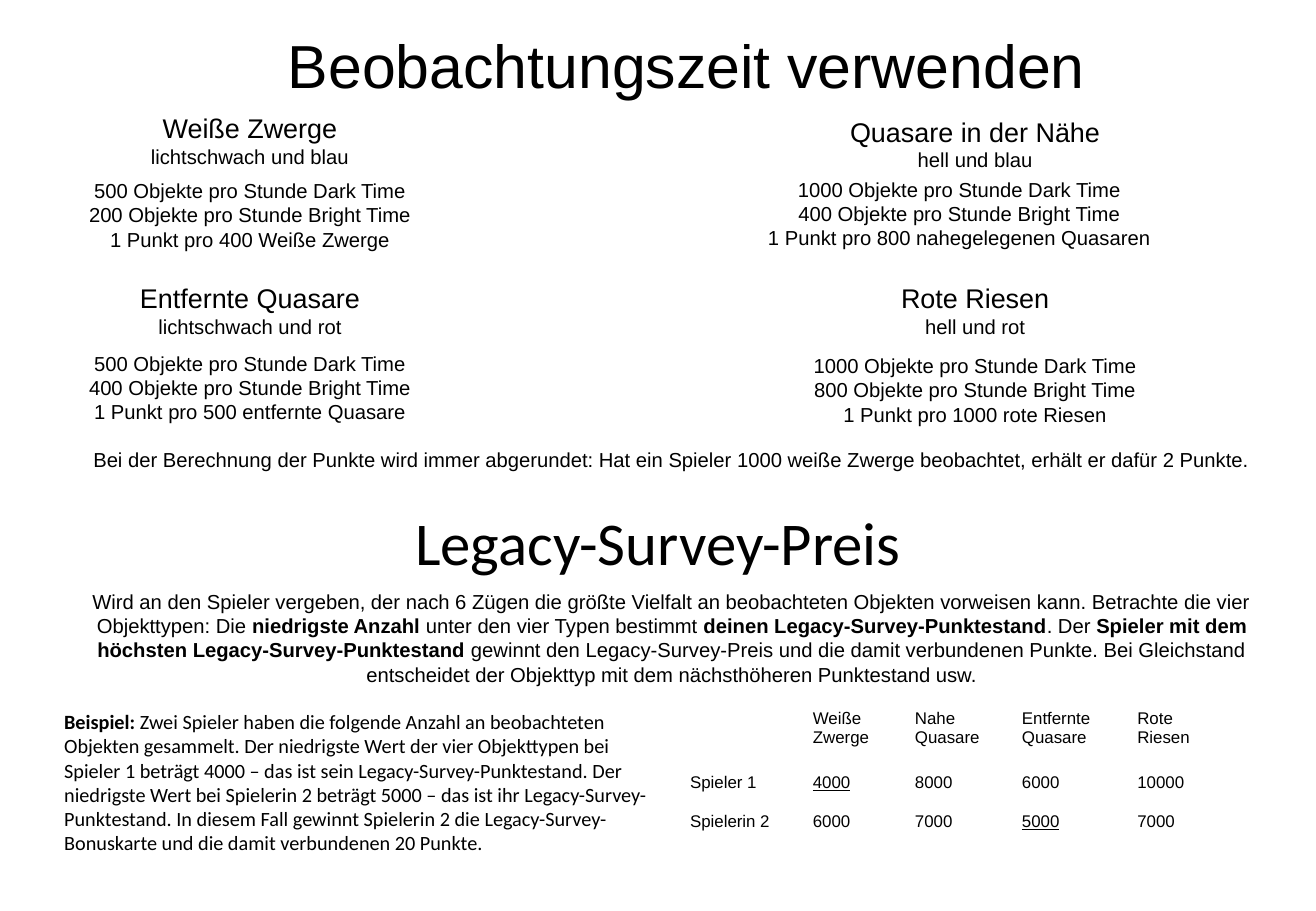
from pptx import Presentation, util as u
from pptx.dml.color import RGBColor
from pptx.enum import text

BLACK = RGBColor(0, 0, 0)
WIDTH, HEIGHT = u.Inches(10.83), u.Inches(7.5)
MARGIN, FULL = 3.97, 94.18  # left edge and width of the running text, in columns
TABLE_TOP = 77.2

# Object type, look, three rules; then centre, top and width of heading and of rules
OBJECT_TYPES = [
    ("Weiße Zwerge", "lichtschwach und blau",
     ["500 Objekte pro Stunde Dark Time",
      "200 Objekte pro Stunde Bright Time",
      "1 Punkt pro 400 Weiße Zwerge"],
     (19, 11.6, 17), (19, 18.93, 26.5)),
    ("Quasare in der Nähe", "hell und blau",
     ["1000 Objekte pro Stunde Dark Time",
      "400 Objekte pro Stunde Bright Time",
      "1 Punkt pro 800 nahegelegenen Quasaren"],
     (74.1, 12, 21.05), (72.9, 18.8, 31.12)),
    ("Entfernte Quasare", "lichtschwach und rot",
     ["500 Objekte pro Stunde Dark Time",
      "400 Objekte pro Stunde Bright Time",
      "1 Punkt pro 500 entfernte Quasare"],
     (19, 30.27, 18.84), (19, 37.87, 26.5)),
    ("Rote Riesen", "hell und rot",
     ["1000 Objekte pro Stunde Dark Time",
      "800 Objekte pro Stunde Bright Time",
      "1 Punkt pro 1000 rote Riesen"],
     (74.1, 30.27, 13.2), (74.1, 38.13, 26.59)),
]

ROUNDING = ("Bei der Berechnung der Punkte wird immer abgerundet: Hat ein Spieler "
            "1000 weiße Zwerge beobachtet, erhält er dafür 2 Punkte.")

# Running text as (words, bold) pairs
AWARD = [
    ("Wird an den Spieler vergeben, der nach 6 Zügen die größte Vielfalt an "
     "beobachteten Objekten vorweisen kann. Betrachte die vier Objekttypen: Die ", False),
    ("niedrigste Anzahl ", True),
    ("unter den vier Typen bestimmt ", False),
    ("deinen Legacy-Survey-Punktestand", True),
    (". Der ", False),
    ("Spieler mit dem höchsten Legacy-Survey-Punktestand ", True),
    ("gewinnt den Legacy-Survey-Preis und die damit verbundenen Punkte. Bei Gleichstand "
     "entscheidet der Objekttyp mit dem nächsthöheren Punktestand usw.", False),
]
EXAMPLE = [
    ("Beispiel:", True),
    (" Zwei Spieler haben die folgende Anzahl an beobachteten Objekten gesammelt. "
     "Der niedrigste Wert der vier Objekttypen bei Spieler 1 beträgt 4000 – das ist "
     "sein Legacy-Survey-Punktestand. Der niedrigste Wert bei Spielerin 2 beträgt 5000 "
     "– das ist ihr Legacy-Survey-Punktestand. In diesem Fall gewinnt Spielerin 2 die "
     "Legacy-Survey-Bonuskarte und die damit verbundenen 20 Punkte.", False),
]

SCORES = [
    ["", "Weiße Zwerge", "Nahe Quasare", "Entfernte Quasare", "Rote\nRiesen"],
    ["Spieler 1", "4000", "8000", "6000", "10000"],
    ["Spielerin 2", "6000", "7000", "5000", "7000"],
]
LOWEST = {(1, 1), (2, 3)}
COLUMN_WIDTHS = [9.33, 7.76, 8.13, 8.77, 10.53]
ROW_HEIGHTS = [7.07, 4.27, 5.47]


def across(columns):
    """Length of a number of the slide's 100 columns."""
    return round(WIDTH * columns / 100)


def down(rows):
    """Length of a number of the slide's 100 rows."""
    return round(HEIGHT * rows / 100)


def place(shape, left, top, width, height):
    shape.left, shape.top = across(left), down(top)
    shape.width, shape.height = across(width), down(height)


def add_run(paragraph, words, size, font="Arial", bold=False, underline=False):
    run = paragraph.add_run()
    run.text = words
    run.font.size, run.font.name = u.Pt(size), font
    run.font.bold, run.font.underline = bold, underline
    run.font.color.rgb = BLACK


def fill_text(shape, paragraphs, font="Arial", align=text.PP_ALIGN.CENTER, wrap=False):
    """Write paragraphs, each a size and a list of (words, bold) pairs."""
    frame = shape.text_frame
    frame.word_wrap = wrap
    frame.auto_size = text.MSO_AUTO_SIZE.SHAPE_TO_FIT_TEXT
    frame.vertical_anchor = text.MSO_ANCHOR.TOP
    for index, (size, pieces) in enumerate(paragraphs):
        paragraph = frame.add_paragraph() if index else frame.paragraphs[0]
        paragraph.alignment = align
        for words, bold in pieces:
            add_run(paragraph, words, size, font, bold)


def add_text(slide, box, paragraphs, **options):
    shape = slide.shapes.add_textbox(0, 0, 0, 0)
    place(shape, *box)
    fill_text(shape, paragraphs, **options)


def add_centred(slide, position, height, lines):
    """Place lines, each a size and its words, around a centre column."""
    centre, top, width = position
    add_text(slide, (centre - width / 2, top, width, height),
             [(size, [(words, False)]) for size, words in lines])


def add_object_type(slide, name, look, rules, heading_position, rules_position):
    add_centred(slide, heading_position, 7.6, [(16, name), (12, look)])
    add_centred(slide, rules_position, 9.47, [(12, rule) for rule in rules])


def add_scores(slide):
    table = slide.shapes.add_table(
        len(SCORES), len(SCORES[0]), across(51.52), down(TABLE_TOP),
        across(sum(COLUMN_WIDTHS)), down(sum(ROW_HEIGHTS))).table
    table.first_row = table.horz_banding = False
    for column, width in zip(table.columns, COLUMN_WIDTHS):
        column.width = across(width)
    for row, height in zip(table.rows, ROW_HEIGHTS):
        row.height = down(height)
    for row, values in enumerate(SCORES):
        for column, value in enumerate(values):
            cell = table.cell(row, column)
            cell.fill.background()
            frame = cell.text_frame
            for index, line in enumerate(value.split("\n")):
                paragraph = frame.add_paragraph() if index else frame.paragraphs[0]
                add_run(paragraph, line, 10, underline=(row, column) in LOWEST)


def main():
    presentation = Presentation()
    presentation.slide_width, presentation.slide_height = WIDTH, HEIGHT
    slide = presentation.slides.add_slide(presentation.slide_layouts[5])

    # Observing time
    title = slide.shapes.title
    place(title, 20.68, 2.4, 62.97, 9.47)
    fill_text(title, [(36, [("Beobachtungszeit verwenden", False)])])
    for object_type in OBJECT_TYPES:
        add_object_type(slide, *object_type)
    add_text(slide, (MARGIN, 48.4, FULL, 4), [(12, [(ROUNDING, False)])], wrap=True)

    # Award
    add_text(slide, (30.38, 54.8, 39.24, 9.47),
             [(36, [("Legacy-Survey-Preis", False)])], font="Calibri")
    add_text(slide, (MARGIN, 64, FULL, 12.13), [(12, AWARD)], wrap=True)

    # Example with its scores
    add_text(slide, (MARGIN, TABLE_TOP, 47.55, 17.47), [(12, EXAMPLE)],
             font="Calibri", align=text.PP_ALIGN.LEFT, wrap=True)
    add_scores(slide)

    presentation.save("out.pptx")


if __name__ == "__main__":
    main()
